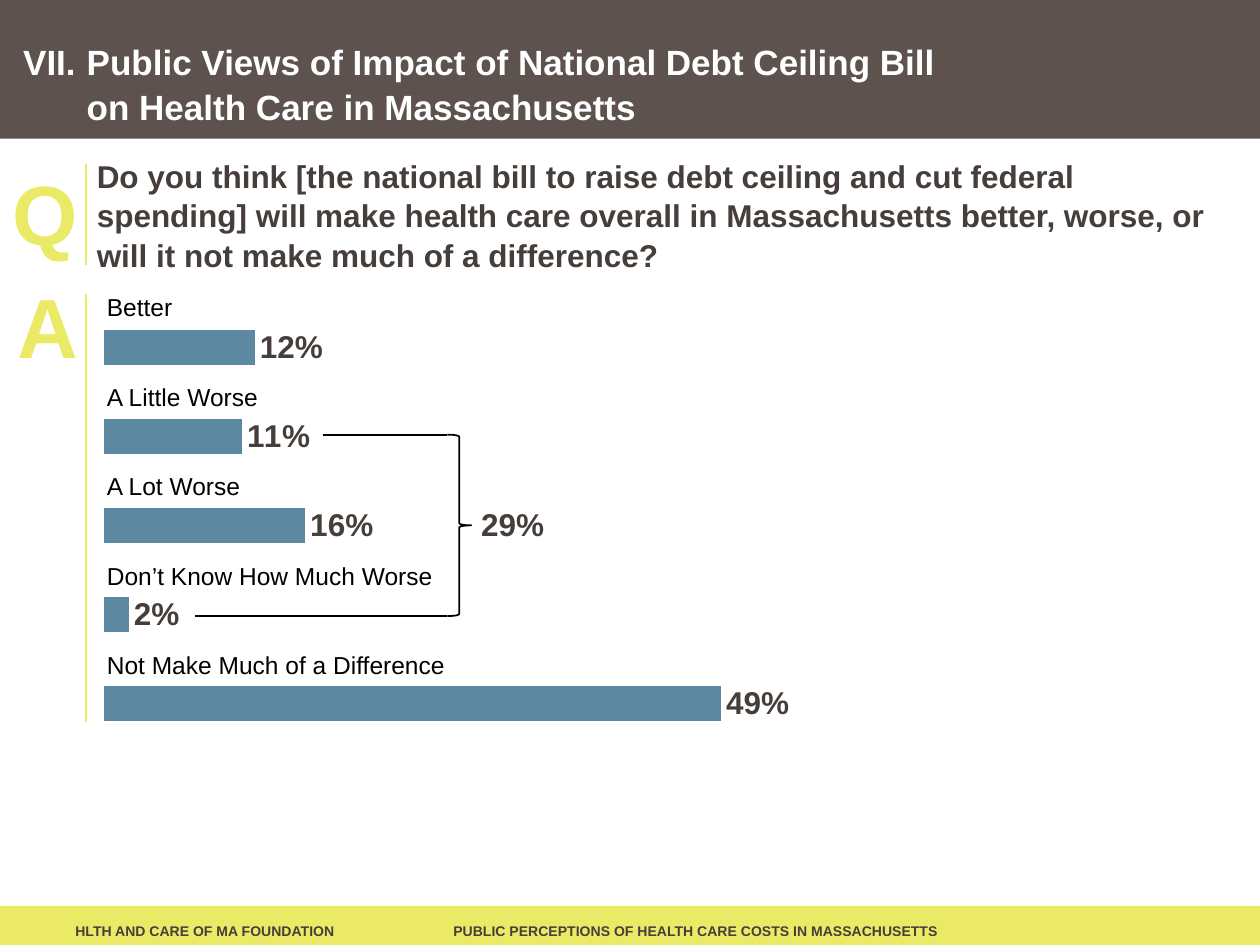
from lxml import etree
from pptx import Presentation
from pptx.chart.data import CategoryChartData
from pptx.dml.color import RGBColor
from pptx.enum import chart as ch, shapes, text
from pptx.oxml import parse_xml
from pptx.oxml.ns import nsdecls, qn
from pptx.util import Inches, Pt

COLORS = {"brown": "5E524E", "lime": "EBEA66", "dark": "463E3B",
          "blue": "5D88A1", "white": "FFFFFF", "black": "000000"}
FONT = "Arial"

TITLE = ["Public Views of Impact of National Debt Ceiling Bill",
         "on Health Care in Massachusetts"]
QUESTION = ("Do you think [the national bill to raise debt ceiling and cut "
            "federal spending] will make health care overall in Massachusetts "
            "better, worse, or will it not make much of a difference?")
ANSWERS = ["Better", "A Little Worse", "A Lot Worse",
           "Don’t Know How Much Worse", "Not Make Much of a Difference"]
# Bars run from the bottom up; the two lowest rows stay empty
VALUES = [None, None, 0.49, 0.02, 0.16, 0.11, 0.12]
FOOTER = [(0.5, 3, "HLTH AND CARE OF MA FOUNDATION"),
          (3.5, 5, "PUBLIC PERCEPTIONS OF HEALTH CARE COSTS IN MASSACHUSETTS")]
RULES = [(1.3, 2.1), (2.33, 5.73)]
LETTERS = [("Q", -0.01, 1.23, 0.73), ("A", 0.03, 2.13, 0.69)]
TOTAL = "29%"
BRACE = (3.55, 3.45, 0.19, 1.44)
LEADS = [(2.56, 3.45), (1.55, 4.89)]

ROW_TOP, ROW_STEP = 2.27, 0.71
CHART = (0.67, 2.25, 9, 5.25)
PLOT = {"x": 0.017, "y": 0.029, "w": 0.978, "h": 0.942}

LEFT, RIGHT = text.PP_ALIGN.LEFT, text.PP_ALIGN.RIGHT
TOP, MIDDLE = text.MSO_ANCHOR.TOP, text.MSO_ANCHOR.MIDDLE


def rgb(name):
    return RGBColor.from_string(COLORS[name])


def style(font, size, color, bold):
    font.name, font.size, font.bold = FONT, Pt(size), bold
    font.color.rgb = rgb(color)


def write(slide, box, words, size, color, bold=True, align=LEFT,
          anchor=TOP, wrap=True, space=1.0):
    frame = slide.shapes.add_textbox(*map(Inches, box)).text_frame
    frame.word_wrap = wrap
    frame.vertical_anchor = anchor
    frame.text = words
    for para in frame.paragraphs:
        para.alignment = align
        para.line_spacing = space
        for run in para.runs:
            style(run.font, size, color, bold)


def band(slide, top, height, color):
    """Draw a full-width bar."""
    bar = slide.shapes.add_shape(shapes.MSO_SHAPE.RECTANGLE, 0, Inches(top),
                                 Inches(10), Inches(height))
    bar.shadow.inherit = False
    bar.fill.solid()
    bar.fill.fore_color.rgb = rgb(color)
    bar.line.fill.background()


def rule(slide, ends, color):
    line = slide.shapes.add_connector(shapes.MSO_CONNECTOR.STRAIGHT,
                                      *map(Inches, ends))
    line.line.color.rgb = rgb(color)
    line.line.width = Pt(1)
    etree.SubElement(line._element.spPr, qn("a:effectLst"))


def add_bars(slide):
    data = CategoryChartData(number_format="0%")
    data.categories = [str(n + 1) for n in range(len(VALUES))]
    data.add_series("Series 1", VALUES)
    chart = slide.shapes.add_chart(ch.XL_CHART_TYPE.BAR_CLUSTERED,
                                   *map(Inches, CHART), data).chart
    style(chart.font, 18, "black", False)
    chart.has_legend = chart.has_title = False
    for axis in (chart.category_axis, chart.value_axis):
        axis.has_major_gridlines = False
        axis.visible = False
    chart.value_axis.minimum_scale = 0
    chart.value_axis.maximum_scale = 0.88

    plot = chart.plots[0]
    plot.gap_width = 155
    plot.vary_by_categories = False
    fill = plot.series[0].format.fill
    fill.solid()
    fill.fore_color.rgb = rgb("blue")
    plot.has_data_labels = True
    labels = plot.data_labels
    labels.show_value = True
    labels.number_format, labels.number_format_is_linked = "0%", False
    labels.position = ch.XL_LABEL_POSITION.OUTSIDE_END
    style(labels.font, 18, "dark", True)

    area = chart._chartSpace.chart.plotArea
    for old in area.findall(qn("c:layout")):
        area.remove(old)
    parts = "".join(f'<c:{k} val="{v}"/>' for k, v in PLOT.items())
    area.insert(0, parse_xml(
        f'<c:layout {nsdecls("c")}><c:manualLayout>'
        '<c:layoutTarget val="inner"/><c:xMode val="edge"/>'
        f'<c:yMode val="edge"/>{parts}</c:manualLayout></c:layout>'))


def add_brace(slide):
    brace = slide.shapes.add_shape(shapes.MSO_SHAPE.RIGHT_BRACE,
                                   *map(Inches, BRACE))
    brace.shadow.inherit = False
    brace.fill.background()
    brace.line.color.rgb = rgb("black")
    brace.line.width = Pt(1)
    for x, y in LEADS:
        rule(slide, (BRACE[0], y, x, y), "black")
    write(slide, (3.72, 3.96, 0.97, 0.4), TOTAL, 18, "dark")


def main():
    deck = Presentation()
    deck.slide_width, deck.slide_height = Inches(10), Inches(7.5)
    slide = deck.slides.add_slide(deck.slide_layouts[6])

    band(slide, 0, 1.1, "brown")
    band(slide, 7.19, 0.31, "lime")
    for x, wide, words in FOOTER:
        write(slide, (x, 7.24, wide, 0.29), words, 8, "dark", anchor=MIDDLE)
    for letter, x, y, wide in LETTERS:
        write(slide, (x, y, wide, 0.91), letter, 48, "lime",
              align=RIGHT, wrap=False)

    write(slide, (0.06, 0.26, 0.64, 0.84), "VII.", 20, "white",
          align=RIGHT, space=1.05)
    write(slide, (0.59, 0.26, 9, 0.84), "\v".join(TITLE), 20, "white",
          space=1.05)
    write(slide, (0.67, 1.2, 9, 1), QUESTION, 18, "dark",
          anchor=MIDDLE, space=1.05)

    add_bars(slide)
    for start, end in RULES:
        rule(slide, (0.68, start, 0.68, end), "lime")
    for row, answer in enumerate(ANSWERS):
        write(slide, (0.75, ROW_TOP + row * ROW_STEP, 4.1, 0.34), answer, 14,
              "black", bold=False)
    add_brace(slide)
    deck.save("out.pptx")


if __name__ == "__main__":
    main()
